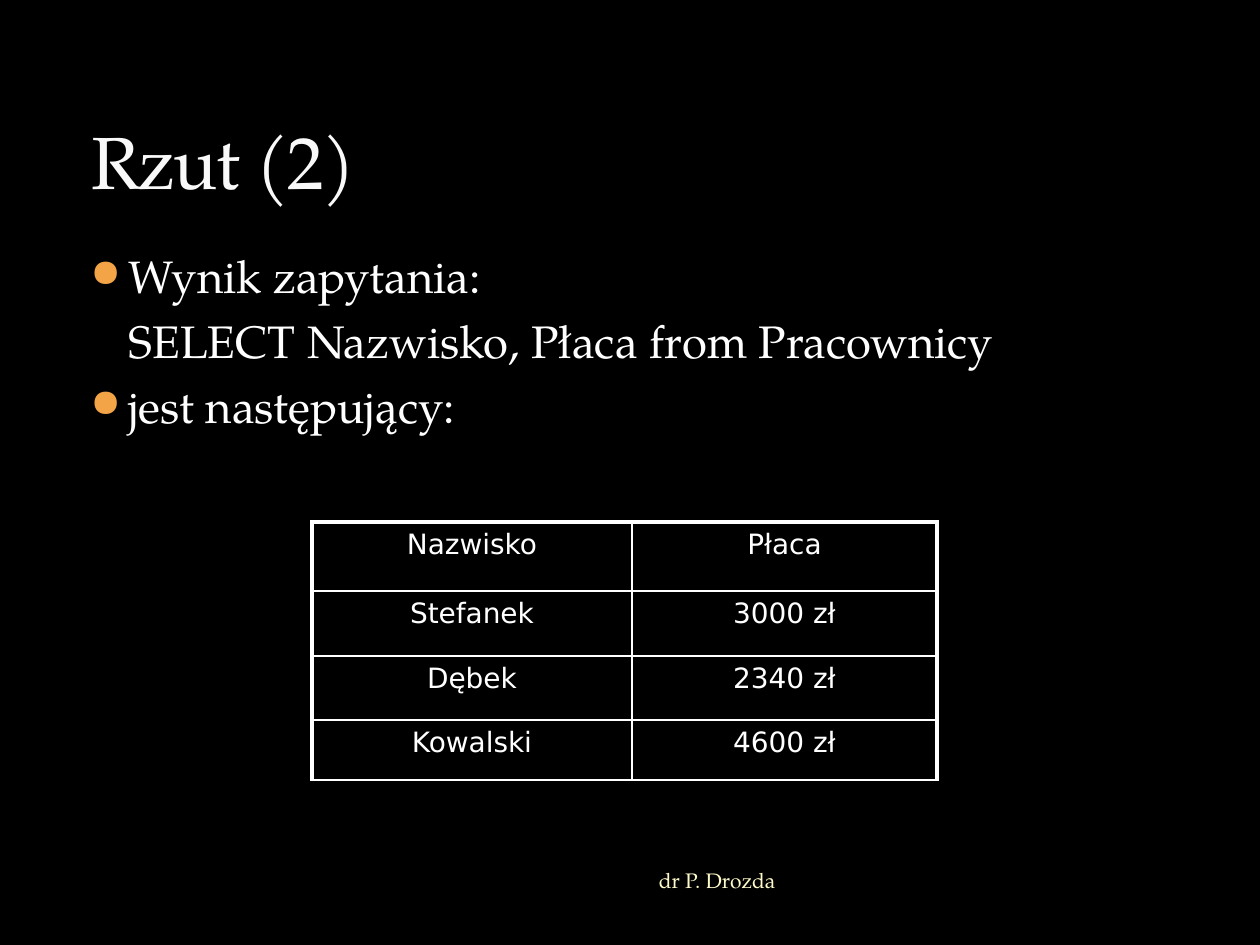
from lxml import etree
from pptx import Presentation
from pptx.dml.color import RGBColor
from pptx.enum.text import MSO_ANCHOR, PP_ALIGN
from pptx.oxml.ns import qn
from pptx.util import Pt

PX = 914400 / 126
BLACK = RGBColor(0x00, 0x00, 0x00)
WHITE = RGBColor(0xFF, 0xFF, 0xFF)
OFF_WHITE = RGBColor(0xF9, 0xF9, 0xF9)
CREAM = RGBColor(0xFE, 0xFA, 0xC9)
ORANGE = RGBColor(0xF3, 0xA4, 0x47)
SERIF = "TeX Gyre Pagella"
SANS = "DejaVu Sans"
LEFT, CENTER, RIGHT = PP_ALIGN.LEFT, PP_ALIGN.CENTER, PP_ALIGN.RIGHT
TOP, MIDDLE, BOTTOM = MSO_ANCHOR.TOP, MSO_ANCHOR.MIDDLE, MSO_ANCHOR.BOTTOM


def px(value):
    return round(value * PX)


def add_text(box, lines, size, color, anchor=TOP, align=LEFT):
    frame = slide.shapes.add_textbox(*map(px, box)).text_frame
    frame.word_wrap = True
    frame.vertical_anchor = anchor
    frame.text = "\n".join(lines)
    for paragraph in frame.paragraphs:
        paragraph.alignment = align
        paragraph.font.name = SERIF
        paragraph.font.size = Pt(size)
        paragraph.font.color.rgb = color
    return frame


presentation = Presentation()
presentation.slide_width = px(1260)
presentation.slide_height = px(945)
slide = presentation.slides.add_slide(presentation.slide_layouts[6])
slide.background.fill.solid()
slide.background.fill.fore_color.rgb = BLACK

# Footer
add_text((294, 854, 494, 53), ["dr P. Drozda"], 12, CREAM, MIDDLE, RIGHT)

# Title, with slightly tightened letters
title = add_text((79, 42, 1103, 168), ["Rzut (2)"], 42, OFF_WHITE, BOTTOM)
title.paragraphs[0].runs[0].font._element.set("spc", "-100")

# Body: the query line is indented but has no bullet
body_lines = [
    ("Wynik zapytania:", True),
    ("SELECT Nazwisko, Płaca from Pracownicy", False),
    ("jest następujący:", True),
]
body = add_text((78, 242, 1087, 291), [text for text, _ in body_lines], 26, WHITE)
for index, (paragraph, (_, bulleted)) in enumerate(zip(body.paragraphs, body_lines)):
    if index:
        paragraph.space_before = Pt(6)
    properties = paragraph._p.get_or_add_pPr()
    properties.set("marL", str(px(38)))
    properties.set("indent", str(px(-38) if bulleted else 0))
    if bulleted:
        bullet_parts = [etree.Element(qn(tag)) for tag in ("a:buClr", "a:buSzPct", "a:buChar")]
        etree.SubElement(bullet_parts[0], qn("a:srgbClr"), val=str(ORANGE))
        bullet_parts[1].set("val", "85000")
        bullet_parts[2].set("char", "●")
        default_run = properties.find(qn("a:defRPr"))
        for part in bullet_parts:
            default_run.addprevious(part)

# Salary table
rows = [
    ("Nazwisko", "Płaca"),
    ("Stefanek", "3000 zł"),
    ("Dębek", "2340 zł"),
    ("Kowalski", "4600 zł"),
]
column_widths = [320, 305]
row_heights = [69, 65, 64, 60]
table = slide.shapes.add_table(
    len(rows), len(column_widths), px(312), px(522),
    px(sum(column_widths)), px(sum(row_heights))).table
table.first_row = False
table.horz_banding = False
for column, width in zip(table.columns, column_widths):
    column.width = px(width)
for row, height in zip(table.rows, row_heights):
    row.height = px(height)

for row_index, row in enumerate(rows):
    for column_index, text in enumerate(row):
        cell = table.cell(row_index, column_index)
        cell.text = text
        paragraph = cell.text_frame.paragraphs[0]
        paragraph.alignment = CENTER
        paragraph.font.name = SANS
        paragraph.font.size = Pt(16)
        paragraph.font.color.rgb = WHITE
        cell.fill.background()

        # Thick lines at the left, right and top edges, thin ones elsewhere
        thick_sides = {
            "a:lnL": column_index == 0,
            "a:lnR": column_index == len(column_widths) - 1,
            "a:lnT": row_index == 0,
            "a:lnB": False,
        }
        cell_properties = cell._tc.get_or_add_tcPr()
        for position, (tag, thick) in enumerate(thick_sides.items()):
            line = etree.Element(qn(tag), w=str(Pt(2.25 if thick else 1)))
            fill = etree.SubElement(line, qn("a:solidFill"))
            etree.SubElement(fill, qn("a:srgbClr"), val=str(WHITE))
            cell_properties.insert(position, line)

presentation.save("out.pptx")
